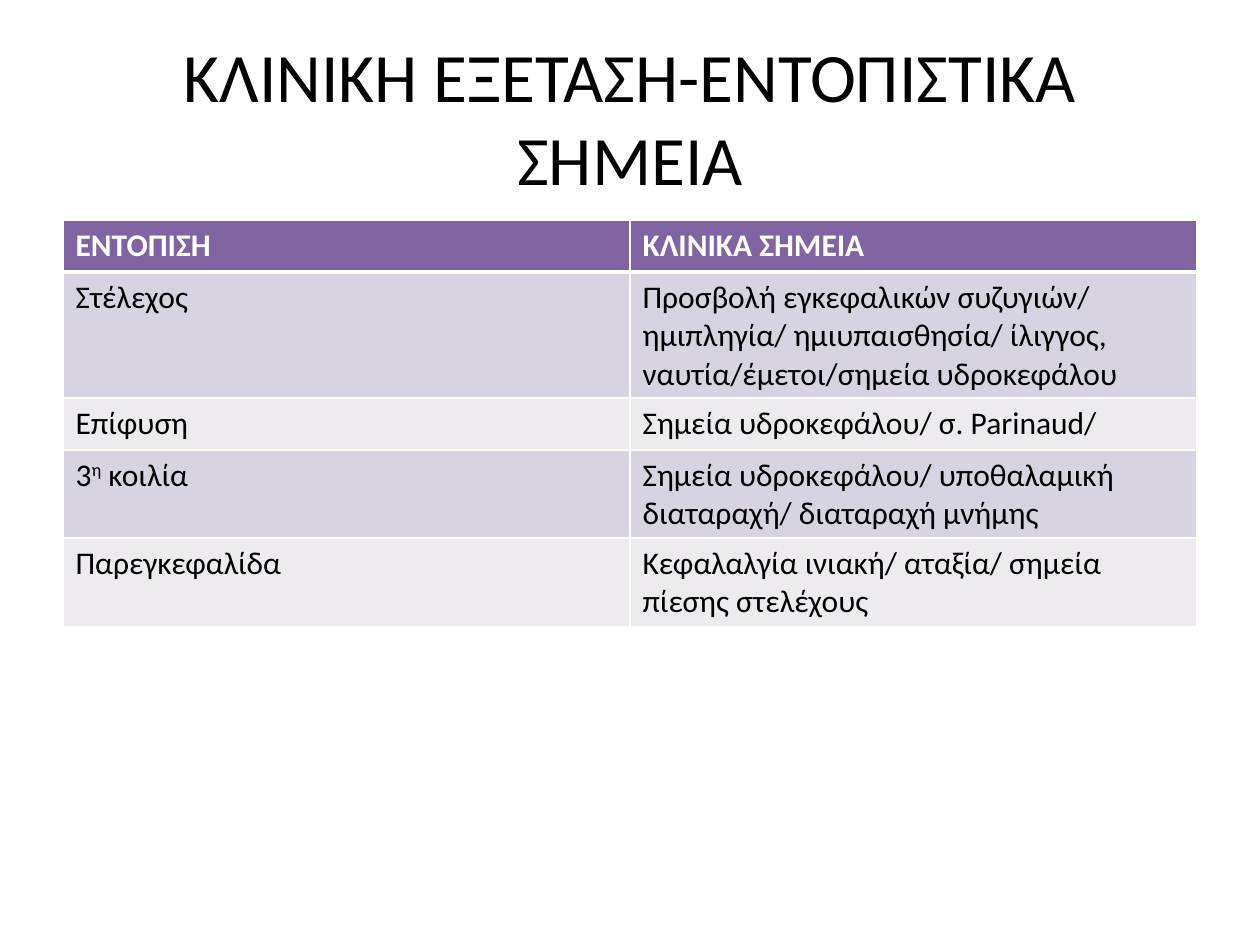
from pptx import Presentation
from pptx.dml.color import RGBColor
from pptx.enum.text import MSO_ANCHOR, PP_ALIGN
from pptx.oxml import parse_xml
from pptx.oxml.ns import nsdecls
from pptx.util import Inches, Pt

COLORS = {
    "header": "8064A2",
    "dark_band": "D8D3E0",
    "light_band": "EDEAF0",
    "white": "FFFFFF",
    "black": "000000",
}
ROWS = [
    (["ΕΝΤΟΠΙΣΗ"], ["ΚΛΙΝΙΚΑ ΣΗΜΕΙΑ"]),
    (["Στέλεχος"], ["Προσβολή εγκεφαλικών συζυγιών/ ημιπληγία/ ημιυπαισθησία/ ίλιγγος, ναυτία/έμετοι/σημεία υδροκεφάλου"]),
    (["Επίφυση"], ["Σημεία υδροκεφάλου/ σ. Parinaud/"]),
    (["3", "η", " κοιλία"], ["Σημεία υδροκεφάλου/ υποθαλαμική διαταραχή/ διαταραχή μνήμης"]),
    (["Παρεγκεφαλίδα"], ["Κεφαλαλγία ινιακή/ αταξία/ σημεία πίεσης στελέχους"]),
]


def style_span(span, size, color, bold=False):
    span.font.name = "Calibri"
    span.font.size = Pt(size)
    span.font.bold = bold
    span.font.color.rgb = RGBColor.from_string(COLORS[color])


def add_border(cell, side, width):
    cell._tc.get_or_add_tcPr().append(parse_xml(
        f'<a:{side} {nsdecls("a")} w="{Pt(width)}"><a:solidFill>'
        f'<a:srgbClr val="{COLORS["white"]}"/></a:solidFill></a:{side}>'
    ))


deck = Presentation()
deck.slide_width = Inches(10)
deck.slide_height = Inches(7.5)
page = deck.slides.add_slide(deck.slide_layouts[6])

title = page.shapes.add_textbox(Inches(0.5), Inches(0.3), Inches(9), Inches(1.25))
title.text_frame.word_wrap = True
title.text_frame.vertical_anchor = MSO_ANCHOR.MIDDLE
para = title.text_frame.paragraphs[0]
para.text = "ΚΛΙΝΙΚΗ ΕΞΕΤΑΣΗ-ΕΝΤΟΠΙΣΤΙΚΑ ΣΗΜΕΙΑ"
para.alignment = PP_ALIGN.CENTER
style_span(para.runs[0], 39.6, "black")

table = page.shapes.add_table(
    len(ROWS), 2, Inches(0.5), Inches(1.75), Inches(9), Inches(0.41) * len(ROWS)
).table

for row, texts in enumerate(ROWS):
    is_header = row == 0
    band = "header" if is_header else "dark_band" if row % 2 else "light_band"
    for column, pieces in enumerate(texts):
        cell = table.cell(row, column)
        for side in ("lnL", "lnR", "lnT", "lnB"):
            at_header_edge = (row, side) in ((0, "lnB"), (1, "lnT"))
            add_border(cell, side, 3 if at_header_edge else 1)
        cell.fill.solid()
        cell.fill.fore_color.rgb = RGBColor.from_string(COLORS[band])
        para = cell.text_frame.paragraphs[0]
        for piece in pieces:
            span = para.add_run()
            span.text = piece
            style_span(span, 18, "white" if is_header else "black", is_header)
            if piece == "η":
                span.font._element.set("baseline", "30000")

deck.save("out.pptx")
